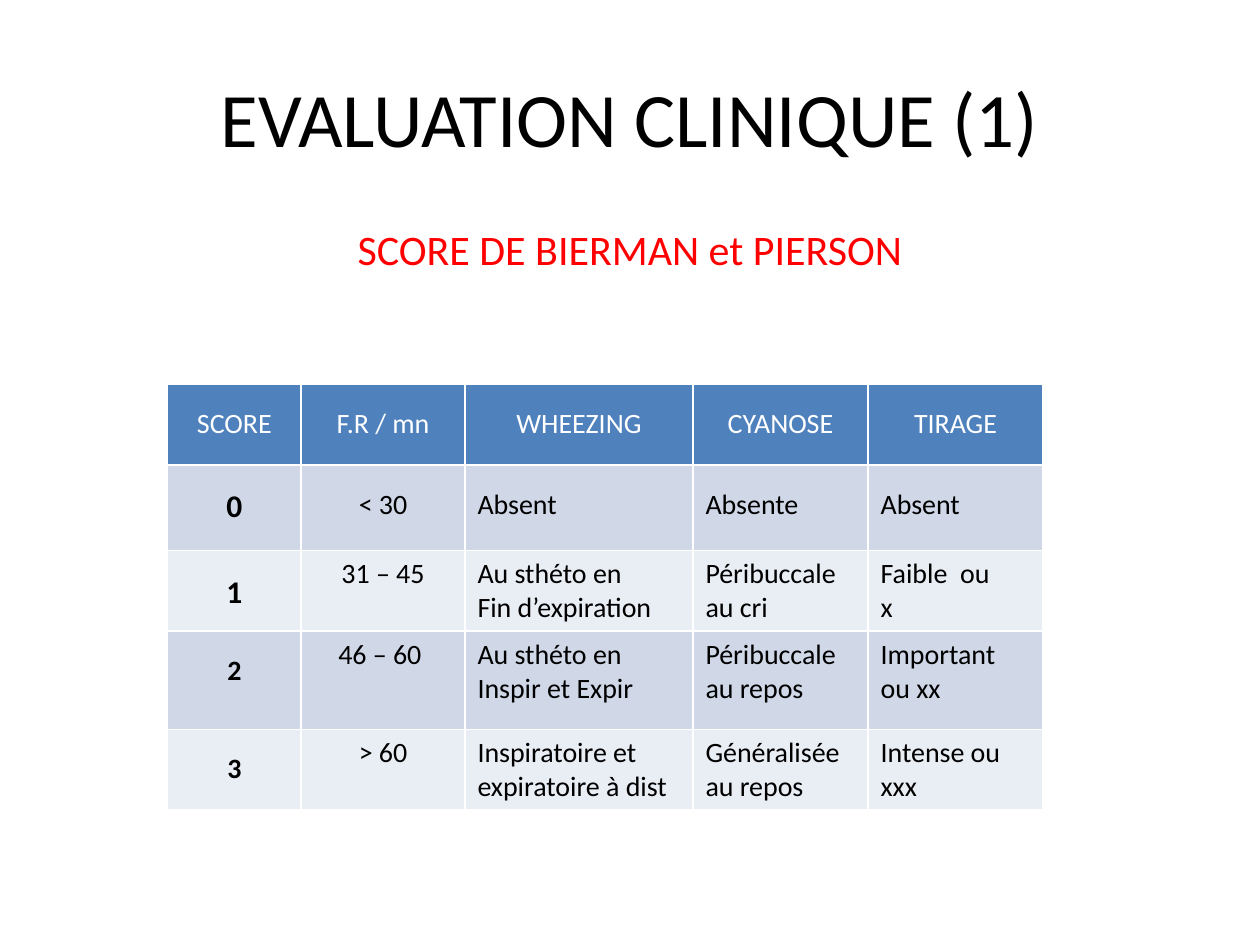
"""Build the slide on clinical evaluation with the Bierman and Pierson score."""
from dataclasses import dataclass

from lxml import etree
from pptx import Presentation
from pptx.dml.color import RGBColor
from pptx.enum.text import MSO_ANCHOR, PP_ALIGN
from pptx.oxml.ns import qn
from pptx.util import Inches, Pt

CENTER, LEFT = PP_ALIGN.CENTER, PP_ALIGN.LEFT
TOP, MIDDLE = MSO_ANCHOR.TOP, MSO_ANCHOR.MIDDLE


@dataclass(frozen=True)
class Theme:
    font: str = "Calibri"
    black: str = "000000"
    white: str = "FFFFFF"
    red: str = "FF0000"
    blue: str = "4F81BD"
    bands: tuple = ("D0D8E8", "E9EDF4")
    title: int = 44
    lead: int = 24
    score: int = 18
    cell: int = 16


theme = Theme()


def write(frame, text, size, color, align, bold=False):
    frame.word_wrap = True
    frame.text = text
    for para in frame.paragraphs:
        para.alignment = align
        font = para.font
        font.name, font.size, font.bold = theme.font, Pt(size), bold
        font.color.rgb = RGBColor.from_string(color)


def edge(cell):
    props = cell._tc.get_or_add_tcPr()
    for place, side in enumerate(("lnL", "lnR", "lnT", "lnB")):
        line = etree.Element(qn(f"a:{side}"), w=str(Pt(1)))
        fill = etree.SubElement(line, qn("a:solidFill"))
        etree.SubElement(fill, qn("a:srgbClr"), val=theme.white)
        props.insert(place, line)


deck = Presentation()
deck.slide_width, deck.slide_height = Inches(10), Inches(7.5)
wide, high = deck.slide_width, deck.slide_height
slide = deck.slides.add_slide(deck.slide_layouts[6])

heads = [
    ("EVALUATION CLINIQUE (1)", 0.04, 1 / 6, theme.title, theme.black, MIDDLE),
    ("SCORE DE BIERMAN et PIERSON", 0.23, 0.66, theme.lead, theme.red, TOP),
]
for text, top, tall, size, color, anchor in heads:
    box = slide.shapes.add_textbox(
        int(wide * 0.05), int(high * top), int(wide * 0.9), int(high * tall))
    box.text_frame.vertical_anchor = anchor
    write(box.text_frame, text, size, color, CENTER)

rows = [
    ("SCORE", "F.R / mn", "WHEEZING", "CYANOSE", "TIRAGE"),
    ("0", "< 30", "Absent", "Absente", "Absent"),
    ("1", "31 – 45", "Au sthéto en\nFin d’expiration", "Péribuccale au cri",
     "Faible  ou\nx"),
    ("2", "46 – 60 ", "Au sthéto en\nInspir et Expir", "Péribuccale au repos",
     "Important ou xx"),
    ("3", "> 60", "Inspiratoire et expiratoire à dist",
     "Généralisée au repos", "Intense ou\nxxx"),
]
spans = [1.06, 1.3, 1.81, 1.39, 1.39]
talls = [0.64, 0.68, 0.64, 0.78, 0.64]
frame = slide.shapes.add_table(
    len(rows), len(spans), Inches(1.33), Inches(3.05),
    Inches(sum(spans)), Inches(sum(talls)))
table = frame.table
for column, span in zip(table.columns, spans):
    column.width = Inches(span)
for row, tall in zip(table.rows, talls):
    row.height = Inches(tall)

for r, texts in enumerate(rows):
    head = r == 0
    for c, text in enumerate(texts):
        cell = table.cell(r, c)
        score = c == 0 and not head
        size = theme.score if score and r < 3 else theme.cell
        color = theme.white if head else theme.black
        align = CENTER if head or c < 2 else LEFT
        write(cell.text_frame, text, size, color, align, score)
        cell.margin_top = Inches(0.18 if r < 2 or c == 0 else 0.05)
        cell.fill.solid()
        shade = theme.blue if head else theme.bands[(r - 1) % 2]
        cell.fill.fore_color.rgb = RGBColor.from_string(shade)
        edge(cell)

deck.save("out.pptx")
